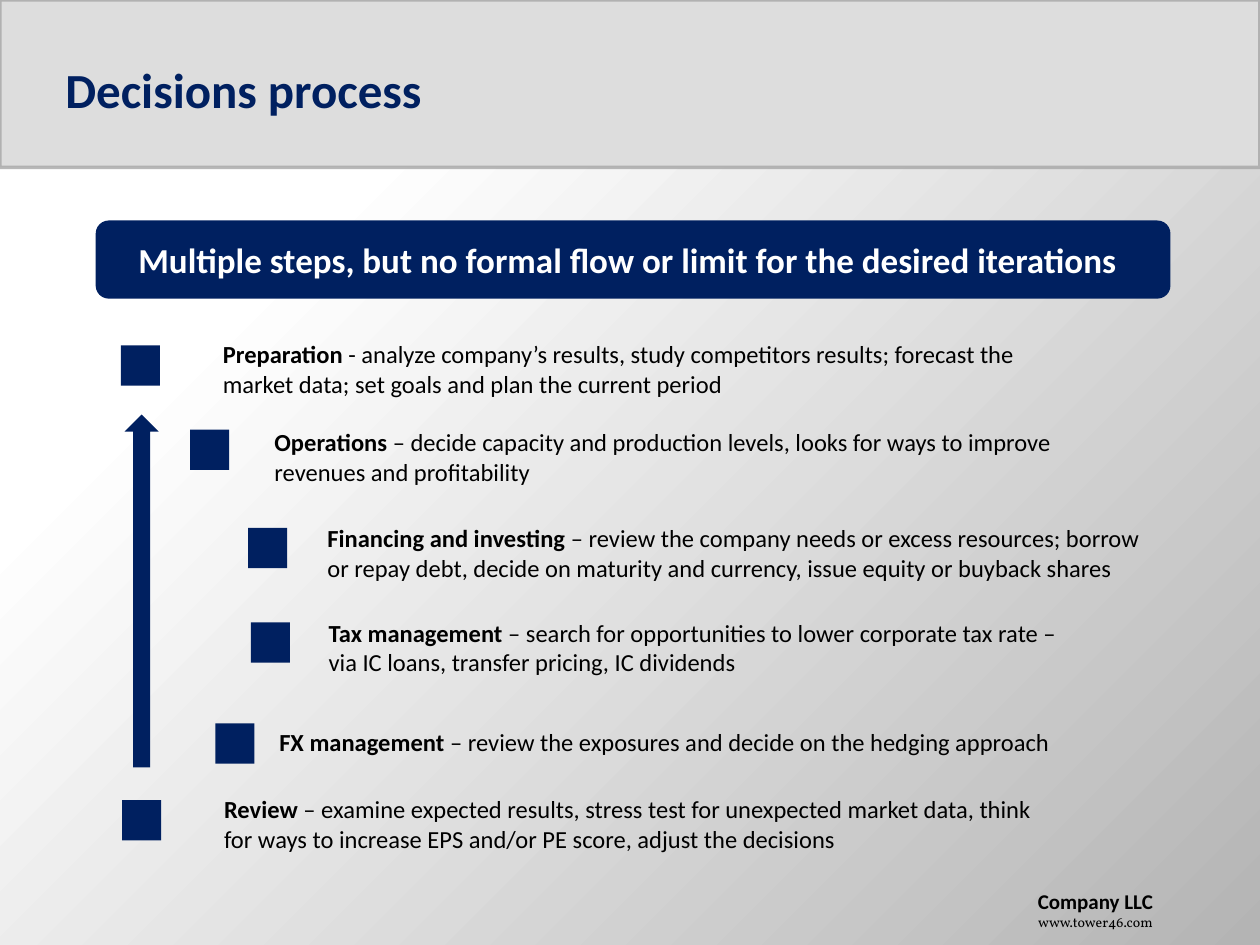
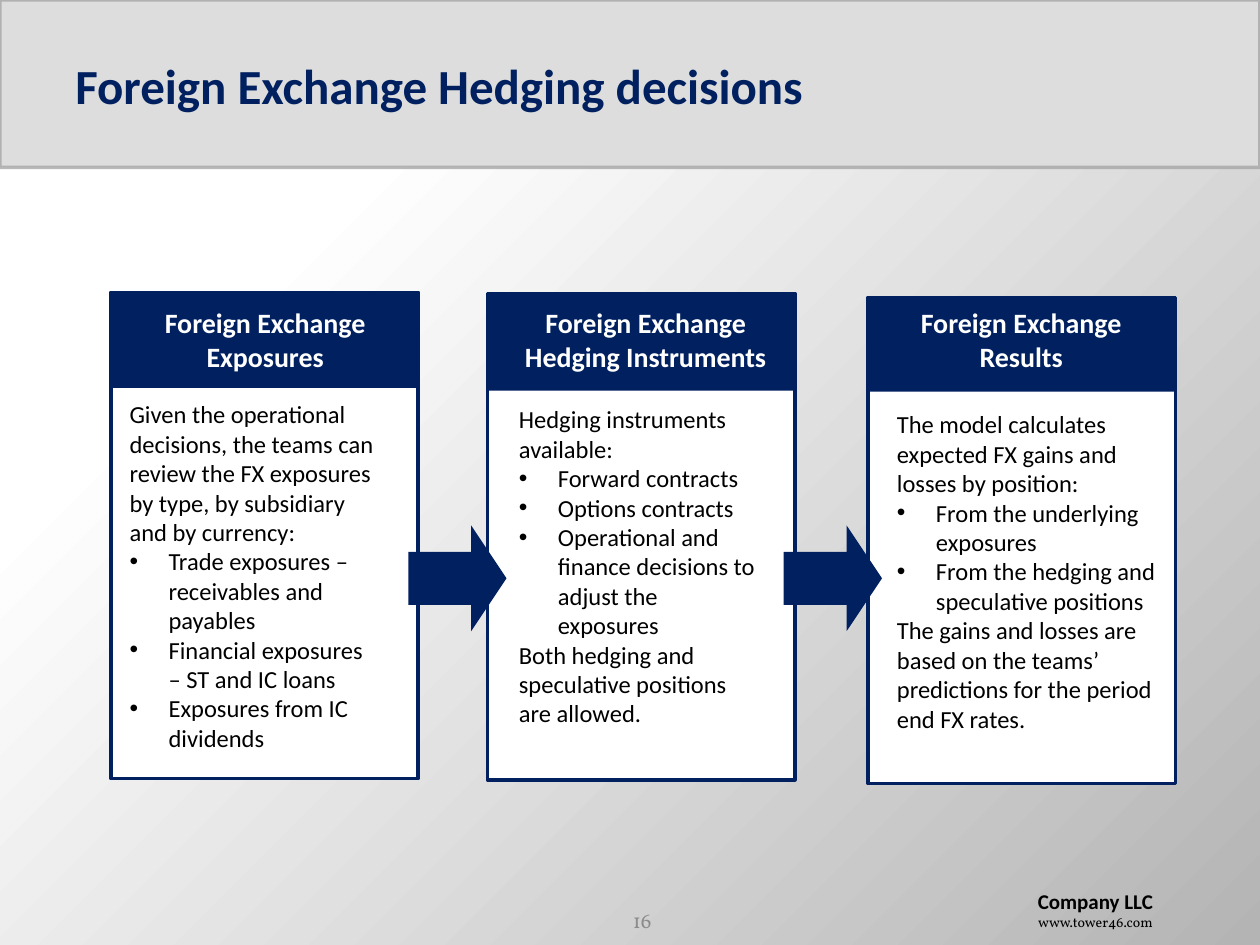
from lxml import etree
from pptx import Presentation
from pptx import util as u
from pptx.dml.color import RGBColor
from pptx.enum import shapes, text
from pptx.oxml import parse_xml
from pptx.oxml.ns import qn

NAVY, WHITE, BLACK = "002060", "FFFFFF", "000000"
BAND, EDGE, GREY = "DDDDDD", "A6A6A6", "8C8C8C"
SANS, SERIF = "Calibri", "Vollkorn"
KIND = shapes.MSO_SHAPE
LEFT, MID, RIGHT = text.PP_ALIGN.LEFT, text.PP_ALIGN.CENTER, text.PP_ALIGN.RIGHT
TOP, HALF = text.MSO_ANCHOR.TOP, text.MSO_ANCHOR.MIDDLE
BACK = """<p:bg xmlns:p="http://schemas.openxmlformats.org/presentationml/2006/main"
 xmlns:a="http://schemas.openxmlformats.org/drawingml/2006/main"><p:bgPr>
<a:gradFill rotWithShape="1"><a:gsLst>
<a:gs pos="24000"><a:srgbClr val="FFFFFF"/></a:gs>
<a:gs pos="100000"><a:srgbClr val="B4B4B4"/></a:gs></a:gsLst>
<a:path path="circle"><a:fillToRect r="100000" b="100000"/></a:path>
</a:gradFill><a:effectLst/></p:bgPr></p:bg>"""


def draw(slide, kind, box, fill, line=None):
    shape = slide.shapes.add_shape(kind, *map(u.Inches, box))
    shape.shadow.inherit = False
    shape.fill.solid()
    shape.fill.fore_color.rgb = RGBColor.from_string(fill)
    if line:
        shape.line.color.rgb = RGBColor.from_string(line)
        shape.line.width = u.Pt(2)
    else:
        shape.line.fill.background()
    return shape


def write(slide, box, paras, size=14, font=SANS, color=BLACK, bold=False,
          align=LEFT, anchor=TOP, pitch=None):
    """Each paragraph is a string or a list of (text, changes) runs; "•" makes a bullet."""
    frame = slide.shapes.add_textbox(*map(u.Inches, box)).text_frame
    frame.word_wrap = True
    frame.vertical_anchor = anchor
    for i, runs in enumerate(paras):
        para = frame.add_paragraph() if i else frame.paragraphs[0]
        para.alignment = align
        if pitch:
            para.line_spacing = u.Pt(pitch)
        if isinstance(runs, str):
            if runs.startswith("•"):
                props = para._p.get_or_add_pPr()
                props.set("marL", str(u.Inches(0.31)))
                props.set("indent", str(u.Inches(-0.31)))
                etree.SubElement(props, qn("a:buFont")).set("typeface", "Arial")
                etree.SubElement(props, qn("a:buChar")).set("char", "•")
            runs = [(runs.lstrip("•"), {})]
        for words, change in runs:
            run = para.add_run()
            run.text = words
            run.font.size = u.Pt(change.get("size", size))
            run.font.name = change.get("font", font)
            run.font.bold = change.get("bold", bold)
            run.font.color.rgb = RGBColor.from_string(color)


deck = Presentation()
deck.slide_width, deck.slide_height = u.Inches(10), u.Inches(7.5)

# Shared background, title band, title and footer
pages = []
for title, left, top in [("Decisions process", 0.42, 0.08),
                         ("Foreign Exchange Hedging decisions", 0.5, 0.05)]:
    page = deck.slides.add_slide(deck.slide_layouts[6])
    page._element.cSld.insert(0, parse_xml(BACK))
    band = draw(page, KIND.RECTANGLE, (0, 0, 10, 1.33), BAND, EDGE)
    tint = band.line._ln.find(".//" + qn("a:srgbClr"))
    etree.SubElement(tint, qn("a:alpha")).set("val", "78000")
    write(page, (left, top, 9, 1.25), [title], size=28, color=NAVY, bold=True, anchor=HALF)
    write(page, (8, 7, 1.25, 0.44),
          [[("Company LLC", {"bold": True})],
           [("www.tower46.com", {"size": 8, "font": SERIF})]], size=12, align=RIGHT)
    pages.append(page)
steps, hedge = pages

# Slide 1: headline bar
draw(steps, KIND.ROUNDED_RECTANGLE, (0.76, 1.75, 8.53, 0.62), NAVY)
write(steps, (1, 1.84, 8.83, 0.44),
      ["Multiple steps, but no formal flow or limit for the desired iterations"],
      size=20, color=WHITE, bold=True)

# Slide 1: steps as marker left, marker top, text left, top, width, line pitch, name, detail
for mark, row, left, top, wide, pitch, name, detail in [
    (0.96, 2.74, 1.67, 2.64, 6.97, 17, "Preparation",
     " - analyze company’s results, study competitors results; forecast the market data; "
     "set goals and plan the current period"),
    (1.51, 3.41, 2.08, 3.34, 6.7, 17, "Operations",
     " – decide capacity and production levels, looks for ways to improve revenues "
     "and profitability"),
    (1.97, 4.19, 2.5, 4.1, 6.71, 17, "Financing and investing",
     " – review the company needs or excess resources; borrow or repay debt, decide on "
     "maturity and currency, issue equity or buyback shares"),
    (1.99, 4.94, 2.51, 4.85, 6.23, 17, "Tax management",
     " – search for opportunities to lower corporate tax rate – via IC loans, "
     "transfer pricing, IC dividends"),
    (1.71, 5.74, 2.12, 5.72, 6.7, None, "FX management",
     " – review the exposures and decide on the hedging approach"),
    (0.97, 6.35, 1.68, 6.25, 6.7, 17, "Review",
     " – examine expected results, stress test for unexpected market data, think for ways "
     "to increase EPS and/or PE score, adjust the decisions"),
]:
    draw(steps, KIND.RECTANGLE, (mark, row, 0.31, 0.32), NAVY)
    write(steps, (left, top, wide, 0.58), [[(name, {"bold": True}), (detail, {})]],
          pitch=pitch)

# Slide 1: loop back to the start
draw(steps, KIND.UP_ARROW, (0.99, 3.29, 0.27, 2.8), NAVY)

# Slide 2: cards as left, card top, header top, header text left, body box, header, body
for left, top, cap, head, body, name, lines in [
    (0.88, 2.32, 2.32, 0.76, (0.93, 3.12, 2.14, 3.23), "Exposures",
     ["Given the operational decisions, the teams can review the FX exposures by type, "
      "by subsidiary and by currency:",
      "•Trade exposures – receivables and payables",
      "•Financial exposures – ST and IC loans",
      "•Exposures from IC dividends"]),
    (3.87, 2.33, 2.34, 3.78, (4.02, 3.16, 2.14, 3), "Hedging Instruments",
     ["Hedging instruments available:",
      "•Forward contracts",
      "•Options contracts",
      "•Operational and finance decisions to adjust the exposures",
      "Both hedging and speculative positions are allowed."]),
    (6.89, 2.36, 2.35, 6.76, (7.02, 3.2, 2.31, 3), "Results",
     ["The model calculates expected FX gains and losses by position:",
      "•From the underlying exposures",
      "•From the hedging and speculative positions",
      "The gains and losses are based on the teams’ predictions for the period end "
      "FX rates."]),
]:
    draw(hedge, KIND.RECTANGLE, (left, top, 2.44, 3.86), WHITE, NAVY)
    draw(hedge, KIND.RECTANGLE, (left, cap, 2.44, 0.76), NAVY)
    write(hedge, (head, 2.38, 2.69, 0.64), ["Foreign Exchange", name],
          size=16, color=WHITE, bold=True, align=MID)
    write(hedge, body, lines)

# Slide 2: arrows between cards
for left in (3.24, 6.22):
    arrow = draw(hedge, KIND.RIGHT_ARROW, (left, 4.17, 0.78, 0.84), NAVY)
    arrow.adjustments[1] = 0.36

# Slide 2: page number
write(hedge, (4.73, 7.1, 0.54, 0.4), ["16"], size=12, font=SERIF, color=GREY,
      align=RIGHT, anchor=HALF)

deck.save("out.pptx")
